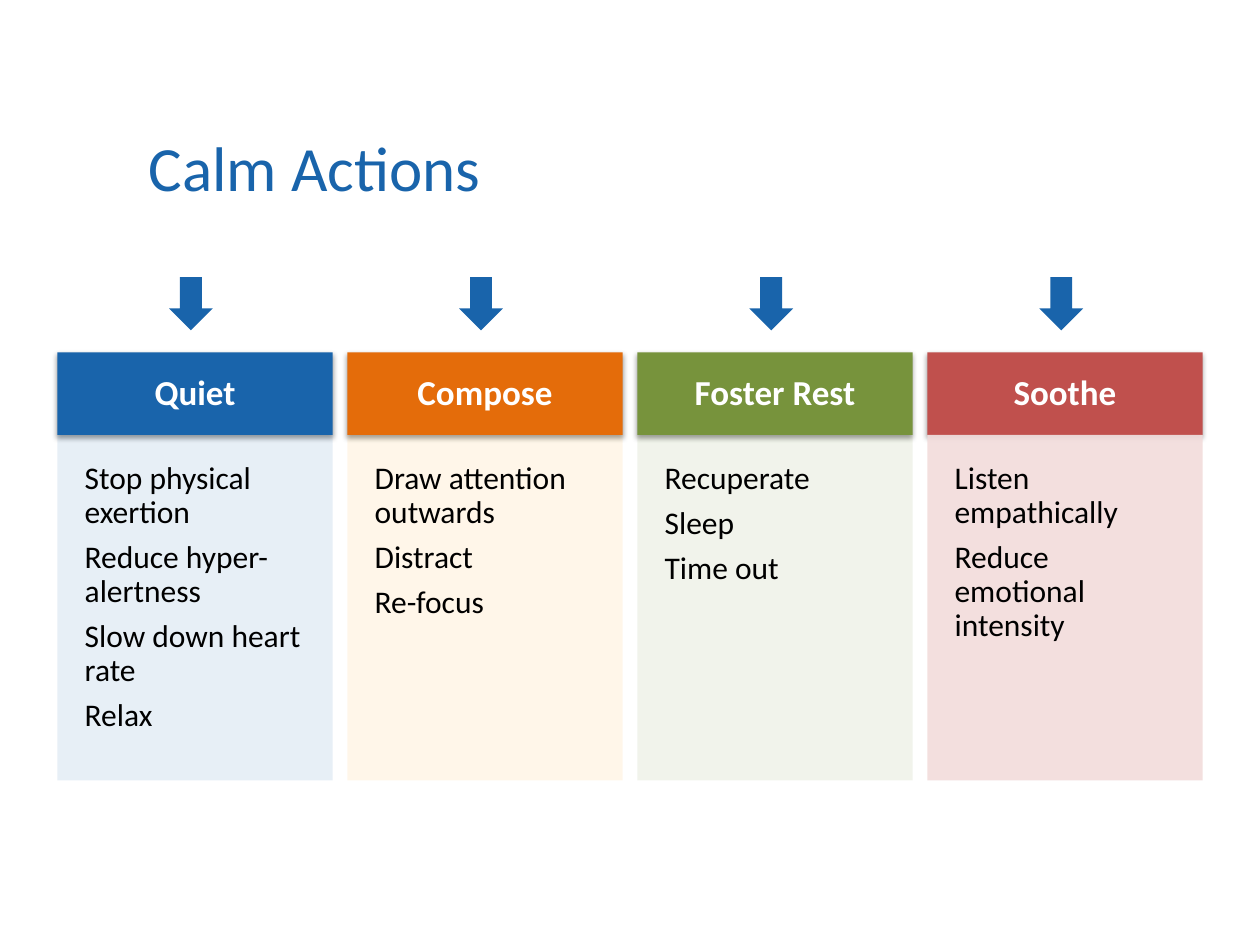
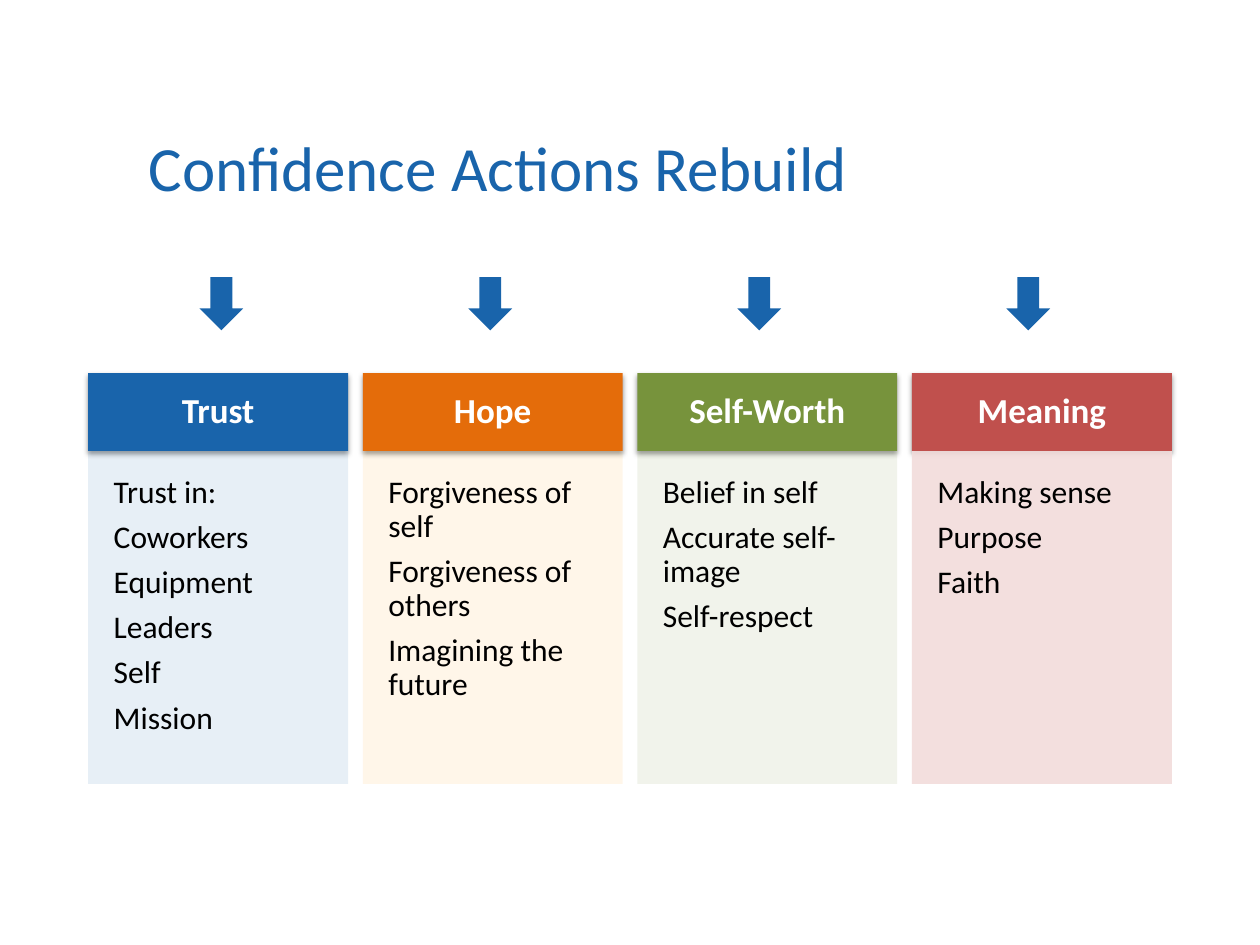
from dataclasses import dataclass

from lxml.etree import SubElement
from pptx import Presentation
from pptx.dml.color import RGBColor
from pptx.enum.shapes import MSO_SHAPE as Preset
from pptx.enum.text import MSO_ANCHOR as Anchor, PP_ALIGN as Align
from pptx.oxml.ns import qn
from pptx.util import Pt


# Shared look
@dataclass(frozen=True)
class Theme:
    font: str = "Calibri"
    accent: str = "1964AB"
    heading_text: str = "FFFFFF"
    body_text: str = "000000"
    shadow: str = "000000"
    title_size: int = 36
    heading_size: int = 20
    body_size: int = 18
    line_spacing: float = 0.9
    space_after: float = 6.3


@dataclass(frozen=True)
class Palette:
    heading: str
    body: str
    body_opacity: int  # percent


@dataclass(frozen=True)
class Box:
    left: float
    top: float
    width: float
    height: float

    def lengths(self) -> tuple:
        return Pt(self.left), Pt(self.top), Pt(self.width), Pt(self.height)


@dataclass(frozen=True)
class Group:
    heading: str
    actions: tuple[str, ...]


@dataclass(frozen=True)
class ActionSlide:
    title: str
    column_width: float
    top: float
    body_height: float
    heading_inset: float
    body_inset: float
    first_arrow: float
    arrow_pitch: float
    groups: tuple[Group, ...]


THEME = Theme()
PALETTES = (
    Palette("1964AB", "1964AB", 10),
    Palette("E46C0A", "FFAE2D", 10),
    Palette("77933C", "77933C", 10),
    Palette("C0504D", "F2DCDB", 90),
)
SLIDE_WIDTH, SLIDE_HEIGHT = 720, 540
TITLE_BOX = Box(77.8, 15.8, 534.2, 104.4)
COLUMN_GAP = 8.4
HEADING_RATIO = 0.3  # heading height to column width
ARROW_TOP, ARROW_WIDTH, ARROW_HEIGHT = 158.4, 25, 30.4

# Content
SLIDES = (
    ActionSlide(
        "Calm Actions", column_width=157.3, top=201.4, body_height=197.4,
        heading_inset=12.2, body_inset=15.6, first_arrow=96.6, arrow_pitch=165.8,
        groups=(
            Group("Quiet", ("Stop physical exertion", "Reduce hyper-alertness",
                            "Slow down heart rate", "Relax")),
            Group("Compose", ("Draw attention outwards", "Distract", "Re-focus")),
            Group("Foster Rest", ("Recuperate", "Sleep", "Time out")),
            Group("Soothe", ("Listen empathically", "Reduce emotional intensity")),
        ),
    ),
    ActionSlide(
        "Confidence Actions Rebuild", column_width=148.5, top=213.2, body_height=190.2,
        heading_inset=11.5, body_inset=14.6, first_arrow=114, arrow_pitch=153.7,
        groups=(
            Group("Trust", ("Trust in:", "Coworkers", "Equipment", "Leaders",
                            "Self", "Mission")),
            Group("Hope", ("Forgiveness of self", "Forgiveness of others",
                           "Imagining the future")),
            Group("Self-Worth", ("Belief in self", "Accurate self-image", "Self-respect")),
            Group("Meaning", ("Making sense", "Purpose", "Faith")),
        ),
    ),
)


# Drawing helpers
def add_filled(slide, preset: Preset, box: Box, color: str):
    shape = slide.shapes.add_shape(preset, *box.lengths())
    shape.fill.solid()
    shape.fill.fore_color.rgb = RGBColor.from_string(color)
    shape.line.fill.background()
    shape.shadow.inherit = False
    return shape


def set_opacity(color_element, percent: int) -> None:
    SubElement(color_element, qn("a:alpha"), val=str(percent * 1000))


def cast_shadow(shape) -> None:
    effects = shape._element.spPr.find(qn("a:effectLst"))
    shadow = SubElement(effects, qn("a:outerShdw"), blurRad=str(Pt(3.1)),
                        dist=str(Pt(1.6)), dir="5400000", rotWithShape="0")
    set_opacity(SubElement(shadow, qn("a:srgbClr"), val=THEME.shadow), 38)


def set_inset(frame, inset: float) -> None:
    frame.margin_left = frame.margin_right = Pt(inset)
    frame.margin_top = frame.margin_bottom = Pt(inset)


def write(frame, lines: tuple[str, ...], size: int, color: str, anchor: Anchor,
          align: Align = Align.LEFT, bold: bool = False) -> None:
    frame.word_wrap = True
    frame.vertical_anchor = anchor
    frame.text = "\n".join(lines)
    for paragraph in frame.paragraphs:
        paragraph.alignment = align
        font = paragraph.font
        font.name, font.size, font.bold = THEME.font, Pt(size), bold
        font.color.rgb = RGBColor.from_string(color)


# Slide parts
def add_title(slide, title: str) -> None:
    frame = slide.shapes.add_textbox(*TITLE_BOX.lengths()).text_frame
    write(frame, (title,), THEME.title_size, THEME.accent, Anchor.BOTTOM)


def add_column(slide, group: Group, palette: Palette, left: float,
               plan: ActionSlide) -> None:
    heading_height = plan.column_width * HEADING_RATIO
    heading = add_filled(slide, Preset.RECTANGLE,
                         Box(left, plan.top, plan.column_width, heading_height),
                         palette.heading)
    cast_shadow(heading)
    set_inset(heading.text_frame, plan.heading_inset)
    write(heading.text_frame, (group.heading,), THEME.heading_size,
          THEME.heading_text, Anchor.MIDDLE, Align.CENTER, bold=True)
    heading.text_frame.paragraphs[0].line_spacing = THEME.line_spacing

    body = add_filled(slide, Preset.RECTANGLE,
                      Box(left, plan.top + heading_height, plan.column_width,
                          plan.body_height),
                      palette.body)
    fill_color = body._element.spPr.find(qn("a:solidFill")).find(qn("a:srgbClr"))
    set_opacity(fill_color, palette.body_opacity)
    set_inset(body.text_frame, plan.body_inset)
    write(body.text_frame, group.actions, THEME.body_size, THEME.body_text, Anchor.TOP)
    for action in body.text_frame.paragraphs:
        action.line_spacing = THEME.line_spacing
        action.space_after = Pt(THEME.space_after)


def add_action_slide(deck, plan: ActionSlide) -> None:
    slide = deck.slides.add_slide(deck.slide_layouts[6])
    add_title(slide, plan.title)
    pitch = plan.column_width + COLUMN_GAP
    first_left = (SLIDE_WIDTH - len(plan.groups) * pitch + COLUMN_GAP) / 2
    for index, (group, palette) in enumerate(zip(plan.groups, PALETTES)):
        add_column(slide, group, palette, first_left + index * pitch, plan)
        arrow_left = plan.first_arrow + index * plan.arrow_pitch
        add_filled(slide, Preset.DOWN_ARROW,
                   Box(arrow_left, ARROW_TOP, ARROW_WIDTH, ARROW_HEIGHT), THEME.accent)


def main() -> None:
    deck = Presentation()
    deck.slide_width, deck.slide_height = Pt(SLIDE_WIDTH), Pt(SLIDE_HEIGHT)
    for plan in SLIDES:
        add_action_slide(deck, plan)
    deck.save("out.pptx")


if __name__ == "__main__":
    main()
